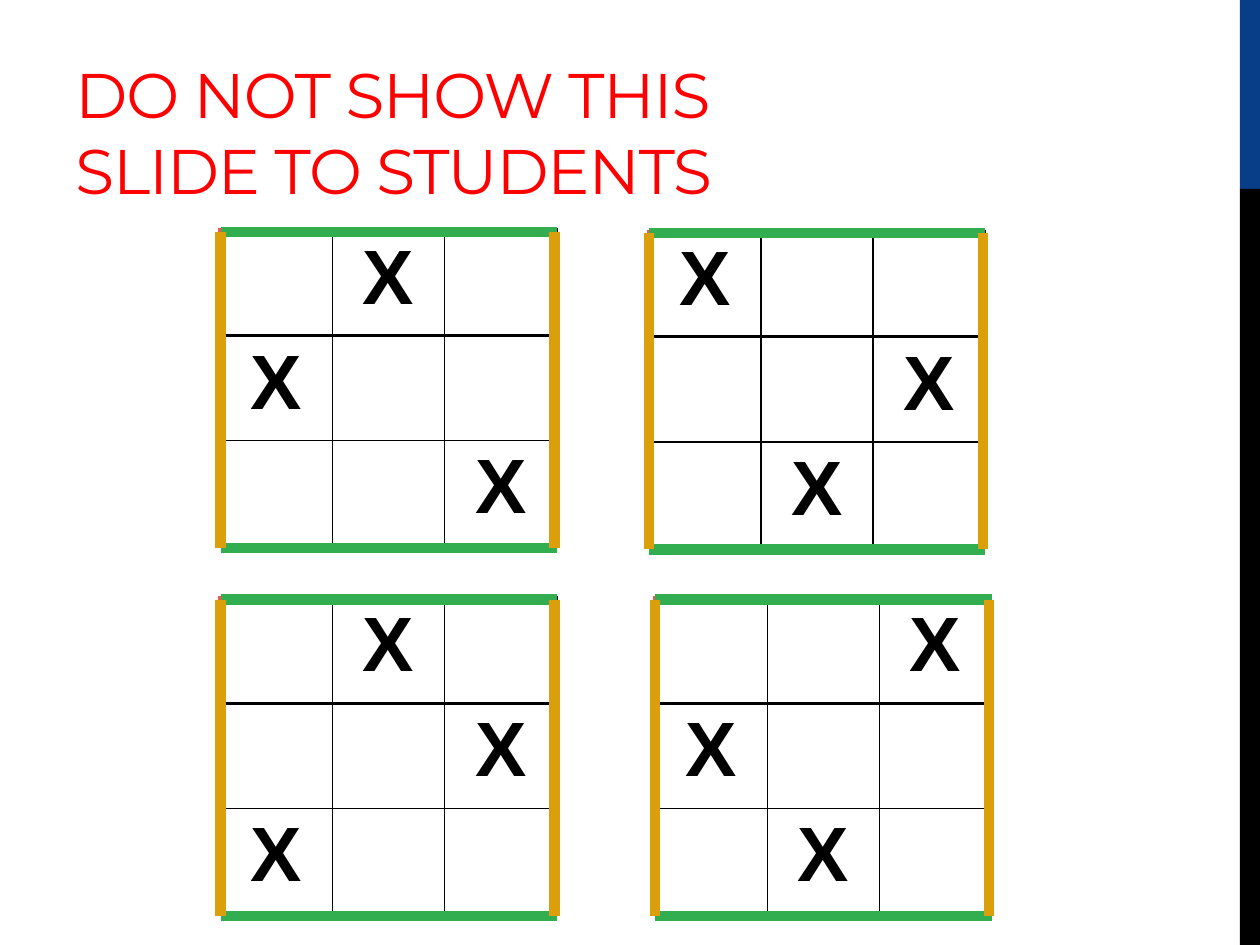
import pptx
import pptx.util
import pptx.dml.color
import pptx.enum.shapes
import pptx.enum.text
import pptx.oxml.ns
from lxml import etree
from pptx.util import Inches

COLORS = {
    "white": "FFFFFF",
    "black": "000000",
    "blue": "073E87",
    "red": "FF0000",
    "coral": "FF5050",
    "green": "32AE51",
    "gold": "DC9F0C",
}
SIZE = 3
GRID_WIDTH, GRID_HEIGHT = 2.67, 2.5

# Left, top, and the column of the X in each row
GRIDS = [
    (5.2, 4.75, (2, 0, 1)),
    (1.75, 1.83, (1, 0, 2)),
    (5.15, 1.84, (0, 2, 1)),
    (1.75, 4.75, (1, 2, 0)),
]


def rgb(name):
    return pptx.dml.color.RGBColor.from_string(COLORS[name])


def write_text(frame, text, *, size, font, color, bold=False, align=None, spacing=None):
    para = frame.paragraphs[0]
    para.alignment = align
    span = para.add_run()
    span.text = text
    span.font.size = pptx.util.Pt(size)
    span.font.name = font
    span.font.bold = bold
    span.font.color.rgb = rgb(color)
    if spacing is not None:
        span.font._element.set("spc", str(round(spacing * 100)))


def add_bar(page, left, top, width, height, color):
    bar = page.shapes.add_shape(
        pptx.enum.shapes.MSO_SHAPE.RECTANGLE,
        Inches(left), Inches(top), Inches(width), Inches(height))
    bar.shadow.inherit = False
    bar.fill.solid()
    bar.fill.fore_color.rgb = rgb(color)
    bar.line.fill.background()


def add_title(page, text):
    box = page.shapes.add_textbox(Inches(0.5), Inches(0.17), Inches(6.33), Inches(1.5))
    frame = box.text_frame
    frame.word_wrap = True
    frame.vertical_anchor = pptx.enum.text.MSO_ANCHOR.BOTTOM
    frame.margin_bottom = Inches(0.03)
    write_text(frame, text, size=36, font="Montserrat", color="red", spacing=-0.6)


def set_borders(cell, borders):
    """Draw cell borders given as {side: (color, points)}, in the order L, R, T, B."""
    properties = cell._tc.get_or_add_tcPr()
    for side, (color, points) in borders.items():
        border = etree.SubElement(
            properties, pptx.oxml.ns.qn(f"a:ln{side}"), w=str(pptx.util.Pt(points)))
        fill = etree.SubElement(border, pptx.oxml.ns.qn("a:solidFill"))
        etree.SubElement(fill, pptx.oxml.ns.qn("a:srgbClr"), val=COLORS[color])


def cell_borders(row, column):
    thin, outer = ("black", 1), ("green", 3)
    return {
        "L": ("coral", 3) if column == 0 else thin,
        "R": thin,
        "T": outer if row == 0 else thin,
        "B": (("black", 2), thin, outer)[row],
    }


def add_grid(page, left, top, marks):
    table = page.shapes.add_table(
        SIZE, SIZE, Inches(left), Inches(top),
        Inches(GRID_WIDTH), Inches(GRID_HEIGHT)).table
    table.first_row = table.horz_banding = False
    for row in range(SIZE):
        for column in range(SIZE):
            cell = table.cell(row, column)
            cell.margin_left = cell.margin_right = Inches(0.06)
            cell.margin_top = cell.margin_bottom = Inches(0.03)
            set_borders(cell, cell_borders(row, column))
            if row == 0:
                cell.fill.background()
            else:
                cell.fill.solid()
                cell.fill.fore_color.rgb = rgb("white")
            if column == marks[row]:
                write_text(cell.text_frame, "X", size=44, font="Arial", color="black",
                           bold=True, align=pptx.enum.text.PP_ALIGN.CENTER)


def add_line(shapes, start, end, color):
    line = shapes.add_connector(
        pptx.enum.shapes.MSO_CONNECTOR.STRAIGHT,
        *(Inches(value) for value in start + end))
    line.line.color.rgb = rgb(color)
    line.line.width = pptx.util.Pt(6)
    etree.SubElement(line._element.spPr, pptx.oxml.ns.qn("a:effectLst"))


def add_frame(page, left, top):
    """Green lines above and below the grid, gold lines at its sides."""
    shapes = page.shapes.add_group_shape().shapes
    upper, lower = top + 0.01, top + 2.52
    for y in (upper, lower):
        add_line(shapes, (left, y), (left + GRID_WIDTH, y), "green")
    for x in (left, left + 2.65):
        add_line(shapes, (x, upper), (x, lower), "gold")


def main():
    deck = pptx.Presentation()
    deck.slide_width, deck.slide_height = Inches(10), Inches(7.5)
    page = deck.slides.add_slide(deck.slide_layouts[6])

    # Side bars
    add_bar(page, 9.84, 0, 0.16, 1.5, "blue")
    add_bar(page, 9.84, 1.5, 0.16, 6, "black")

    add_title(page, "DO NOT SHOW THIS SLIDE TO STUDENTS")

    # Four framed grids
    for left, top, marks in GRIDS:
        add_grid(page, left, top, marks)
        add_frame(page, left, top)

    deck.save("out.pptx")


if __name__ == "__main__":
    main()
